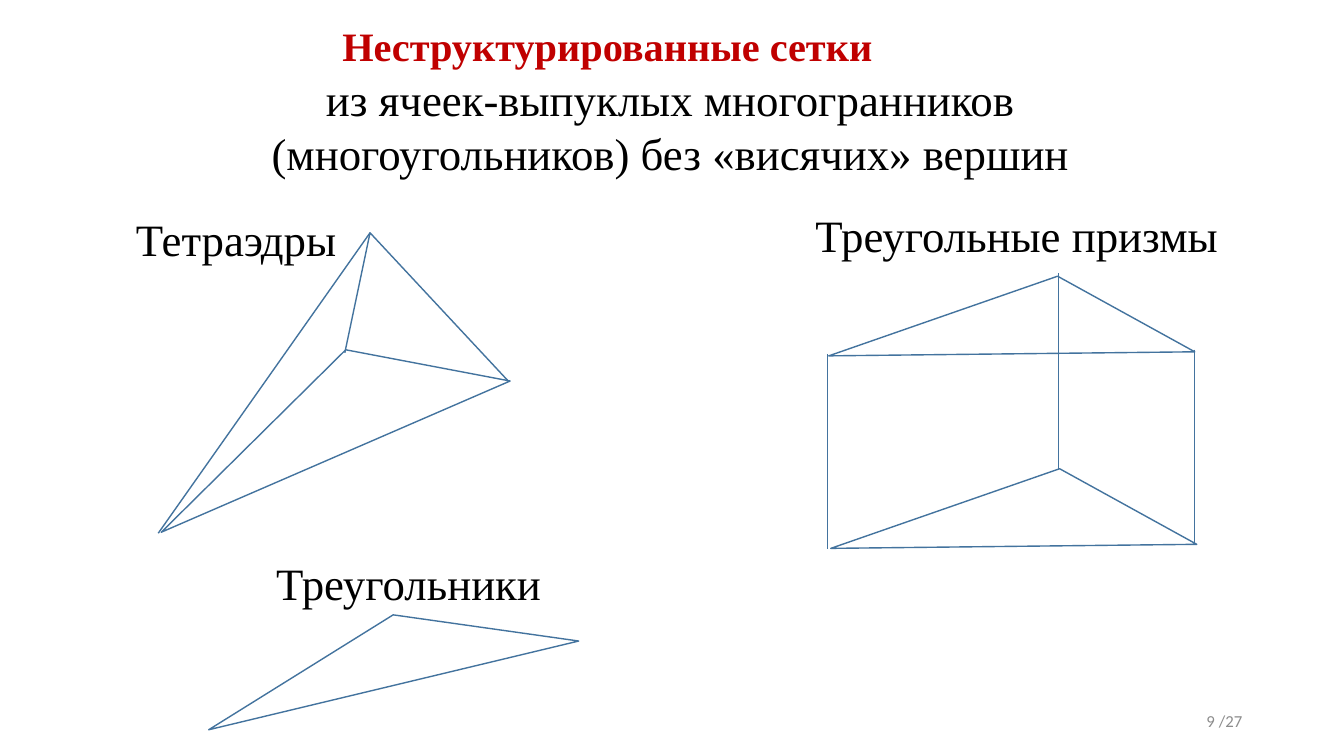
"""Builds the slide on unstructured meshes: tetrahedra, triangular prisms and triangles."""
from dataclasses import dataclass

from lxml import etree
from pptx import Presentation, util as u
from pptx.dml.color import RGBColor
from pptx.enum import shapes, text
from pptx.oxml import ns

SLIDE_WIDTH, SLIDE_HEIGHT = u.Inches(13.33), u.Inches(7.5)
COLUMN, ROW = SLIDE_WIDTH / 133.3, SLIDE_HEIGHT / 75

HEADING_RED = RGBColor(0xC0, 0x00, 0x00)
BODY_BLACK = RGBColor(0x00, 0x00, 0x00)
NUMBER_GREY = RGBColor(0x8C, 0x8C, 0x8C)
EDGE_BLUE = RGBColor(0x43, 0x73, 0x9E)

Point = tuple[float, float]


@dataclass(frozen=True)
class Caption:
    """Words placed at a column and row of the grid."""
    words: str
    column: float
    row: float
    columns: float
    rows: float = 6.4
    size: float = 32
    font: str = "Times New Roman"
    color: RGBColor = BODY_BLACK
    bold: bool = False
    align: text.PP_ALIGN = text.PP_ALIGN.LEFT
    anchor: text.MSO_ANCHOR = text.MSO_ANCHOR.TOP
    spacing: float = 1.0


@dataclass(frozen=True)
class Outline:
    """Corners of a face or an open path, in columns and rows."""
    corners: tuple[Point, ...]
    closed: bool = True


@dataclass(frozen=True)
class Edge:
    """A single straight edge between two grid points."""
    start: Point
    end: Point


@dataclass(frozen=True)
class Cell:
    """A mesh cell made of outlines and edges."""
    outlines: tuple[Outline, ...]
    edges: tuple[Edge, ...] = ()


CAPTIONS = (
    Caption("Неструктурированные сетки", 30.3, 1.8, 59.9, 6, size=28.8, color=HEADING_RED,
            bold=True, align=text.PP_ALIGN.CENTER, anchor=text.MSO_ANCHOR.MIDDLE, spacing=0.9),
    Caption("из ячеек-выпуклых многогранников (многоугольников) без «висячих» вершин",
            23.5, 6.6, 86, 11.8, align=text.PP_ALIGN.CENTER),
    Caption("Тетраэдры", 12.5, 20.5, 21.9),
    Caption("Треугольные призмы", 79.9, 20.1, 44.4),
    Caption("Треугольники", 26.4, 54.6, 30),
    Caption("9 /27", 94.2, 69.5, 30, 4, size=12, font="Calibri", color=NUMBER_GREY,
            align=text.PP_ALIGN.RIGHT, anchor=text.MSO_ANCHOR.MIDDLE),
)

PRISM_TOP = ((82.2, 35.3), (118.5, 34.9), (104.9, 27.4))
PRISM_SHIFT = (0.2, 19.1)
PRISM_HEIGHT = 19.4
PRISM_EDGE_TOPS = ((82.1, 35.1), (105, 27.1), (118.5, 34.7))

PRISM = Cell(
    outlines=(
        Outline(PRISM_TOP),
        Outline(tuple((x + PRISM_SHIFT[0], y + PRISM_SHIFT[1]) for x, y in PRISM_TOP)),
    ),
    edges=tuple(Edge((x, y), (x, y + PRISM_HEIGHT)) for x, y in PRISM_EDGE_TOPS),
)
TETRAHEDRON = Cell(
    outlines=(
        Outline(((16, 52.8), (50.6, 37.8), (34.3, 34.7))),
        Outline(((50.4, 37.8), (36.7, 23.1), (34.2, 35)), closed=False),
    ),
    edges=(Edge((36.7, 23.1), (15.7, 52.9)),),
)
TRIANGLE = Cell(outlines=(Outline(((20.7, 72.4), (57.4, 63.6), (39, 61))),))


def on_grid(point: Point) -> tuple[int, int]:
    """Turn columns and rows into slide units."""
    return round(point[0] * COLUMN), round(point[1] * ROW)


def style_line(line) -> None:
    """Give a line the colour and width of a mesh edge."""
    line.color.rgb = EDGE_BLUE
    line.width = u.Pt(1)


def draw_outline(target, outline: Outline) -> None:
    """Draw one unfilled outline."""
    first, *others = map(on_grid, outline.corners)
    builder = target.build_freeform(*first, scale=1.0)
    builder.add_line_segments(others, close=outline.closed)
    face = builder.convert_to_shape()
    face.shadow.inherit = False
    face.fill.background()
    style_line(face.line)


def draw_edge(target, edge: Edge) -> None:
    """Draw one straight edge without a shadow."""
    side = target.add_connector(
        shapes.MSO_CONNECTOR.STRAIGHT, *on_grid(edge.start), *on_grid(edge.end))
    style_line(side.line)
    etree.SubElement(side.element.spPr, ns.qn("a:effectLst"))


def draw_cell(target, cell: Cell) -> None:
    """Draw all the outlines and edges of a mesh cell."""
    for outline in cell.outlines:
        draw_outline(target, outline)
    for edge in cell.edges:
        draw_edge(target, edge)


def draw_caption(target, caption: Caption) -> None:
    """Write one caption."""
    box = target.add_textbox(*on_grid((caption.column, caption.row)),
                             *on_grid((caption.columns, caption.rows)))
    frame = box.text_frame
    frame.word_wrap = True
    frame.vertical_anchor = caption.anchor
    paragraph = frame.paragraphs[0]
    paragraph.alignment = caption.align
    paragraph.line_spacing = caption.spacing
    run = paragraph.add_run()
    run.text = caption.words
    run.font.name = caption.font
    run.font.size = u.Pt(caption.size)
    run.font.bold = caption.bold
    run.font.color.rgb = caption.color


def main() -> None:
    """Build and save the slide."""
    deck = Presentation()
    deck.slide_width, deck.slide_height = SLIDE_WIDTH, SLIDE_HEIGHT
    slide = deck.slides.add_slide(deck.slide_layouts[6])
    for solid in (PRISM, TETRAHEDRON):
        draw_cell(slide.shapes.add_group_shape().shapes, solid)
    draw_cell(slide.shapes, TRIANGLE)
    for caption in CAPTIONS:
        draw_caption(slide.shapes, caption)
    deck.save("out.pptx")


if __name__ == "__main__":
    main()
